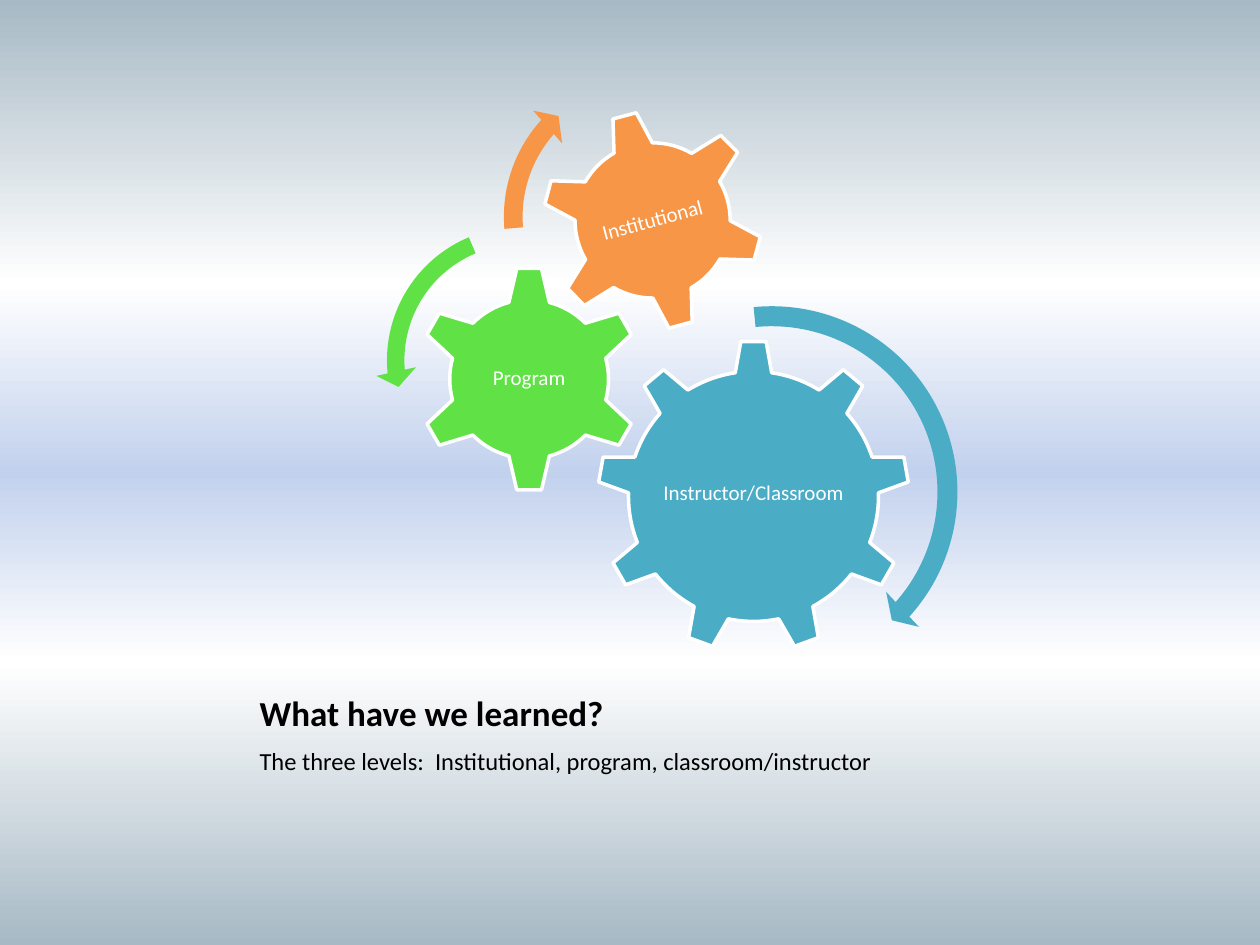
"""Build a slide with three interlocking gears for the levels of learning."""
from lxml import etree
from pptx import Presentation
from pptx.dml.color import RGBColor
from pptx.enum.shapes import MSO_SHAPE
from pptx.enum.text import MSO_ANCHOR, PP_ALIGN
from pptx.oxml.ns import qn
from pptx.util import Inches, Pt

GEAR_SIX, GEAR_NINE = MSO_SHAPE.GEAR_6, MSO_SHAPE.GEAR_9
CLOCKWISE, COUNTER = MSO_SHAPE.CIRCULAR_ARROW, MSO_SHAPE.LEFT_CIRCULAR_ARROW
TOP, MIDDLE, BOTTOM = MSO_ANCHOR.TOP, MSO_ANCHOR.MIDDLE, MSO_ANCHOR.BOTTOM
LEFT, CENTER = PP_ALIGN.LEFT, PP_ALIGN.CENTER

THEME = {
    "font": "Calibri", "title": 20, "body": 14, "label": 12,
    "ink": "000000", "light": "FFFFFF",
    "classroom": "4BACC6", "program": "60E146", "institution": "F79646",
    "backdrop": [(0, "A7B9C5"), (30, "FFFFFF"), (50, "C2D1ED"),
                 (70, "FFFFFF"), (100, "A7B9C5")],
}

deck = Presentation()
deck.slide_width, deck.slide_height = Inches(10), Inches(7.5)
COLUMN, ROW = deck.slide_width / 10, deck.slide_height / 7.5
page = deck.slides.add_slide(deck.slide_layouts.get_by_name("Picture with Caption"))


def cells(left, top, width, height):
    """Turn grid cells into slide lengths."""
    return [int(n * unit) for n, unit in zip((left, top, width, height), (COLUMN, ROW) * 2)]


def write(box, text, size, color, anchor, align, bold=False):
    """Fill a shape with one formatted paragraph."""
    frame = box.text_frame
    frame.text = text
    frame.vertical_anchor = anchor
    para = frame.paragraphs[0]
    para.alignment = align
    para.font.name, para.font.size, para.font.bold = THEME["font"], Pt(THEME[size]), bold
    para.font.color.rgb = RGBColor.from_string(THEME[color])
    return frame


backdrop = page.background.fill
backdrop.gradient()
backdrop.gradient_angle = 270
stops = page.element.find(".//" + qn("a:gsLst"))
stops.clear()
for percent, color in THEME["backdrop"]:
    stop = etree.SubElement(stops, qn("a:gs"), pos=str(percent * 1000))
    etree.SubElement(stop, qn("a:srgbClr"), val=color)

title, picture, body = page.placeholders
picture.element.getparent().remove(picture.element)
title.left, title.top, title.width, title.height = cells(1.96, 5.25, 6, 0.62)
body.left, body.top, body.width, body.height = cells(1.96, 5.87, 6, 0.88)
write(title, "What have we learned?", "title", "ink", BOTTOM, LEFT, True)
write(body, "The three levels:  Institutional, program, classroom/instructor",
      "body", "ink", TOP, LEFT)

GEARS = [
    ("Instructor/Classroom", "classroom", GEAR_NINE, 4.74, 2.7, 2.48, 0),
    ("Program", "program", GEAR_SIX, 3.3, 2.11, 1.8, 0),
    ("Institutional", "institution", GEAR_SIX, 4.3, 0.87, 1.76, 345),
]
ARROWS = [
    ("classroom", CLOCKWISE, 4.54, 2.32, 3.17, (0.05, 2.99, 25.14, 158.65, 0.06)),
    ("program", COUNTER, 2.98, 1.71, 2.3, (0.06, 4.3, 104.89, 148.38, 0.07)),
    ("institution", CLOCKWISE, 3.9, 0.48, 2.48, (0.06, 3.94, 133.14, 105.08, 0.07)),
]
diagram = page.shapes.add_group_shape().shapes

for label, color, outline, left, top, size, angle in GEARS:
    gear = diagram.add_shape(outline, *cells(left, top, size, size))
    gear.shadow.inherit = False
    gear.rotation = angle
    gear.fill.solid()
    gear.fill.fore_color.rgb = RGBColor.from_string(THEME[color])
    gear.line.color.rgb = RGBColor.from_string(THEME["light"])
    gear.line.width = Pt(2)
    frame = write(gear, label, "label", "light", MIDDLE, CENTER)
    frame.word_wrap = False
    frame.margin_left = frame.margin_right = Inches(0.02)
    frame.margin_top = frame.margin_bottom = Inches(0.02)
    frame.paragraphs[0].line_spacing = 0.9

for color, outline, left, top, size, bends in ARROWS:
    arrow = diagram.add_shape(outline, *cells(left, top, size, size))
    arrow.shadow.inherit = False
    arrow.fill.solid()
    arrow.fill.fore_color.rgb = RGBColor.from_string(THEME[color])
    arrow.line.fill.background()
    for index, bend in enumerate(bends):
        arrow.adjustments[index] = bend

deck.save("out.pptx")
